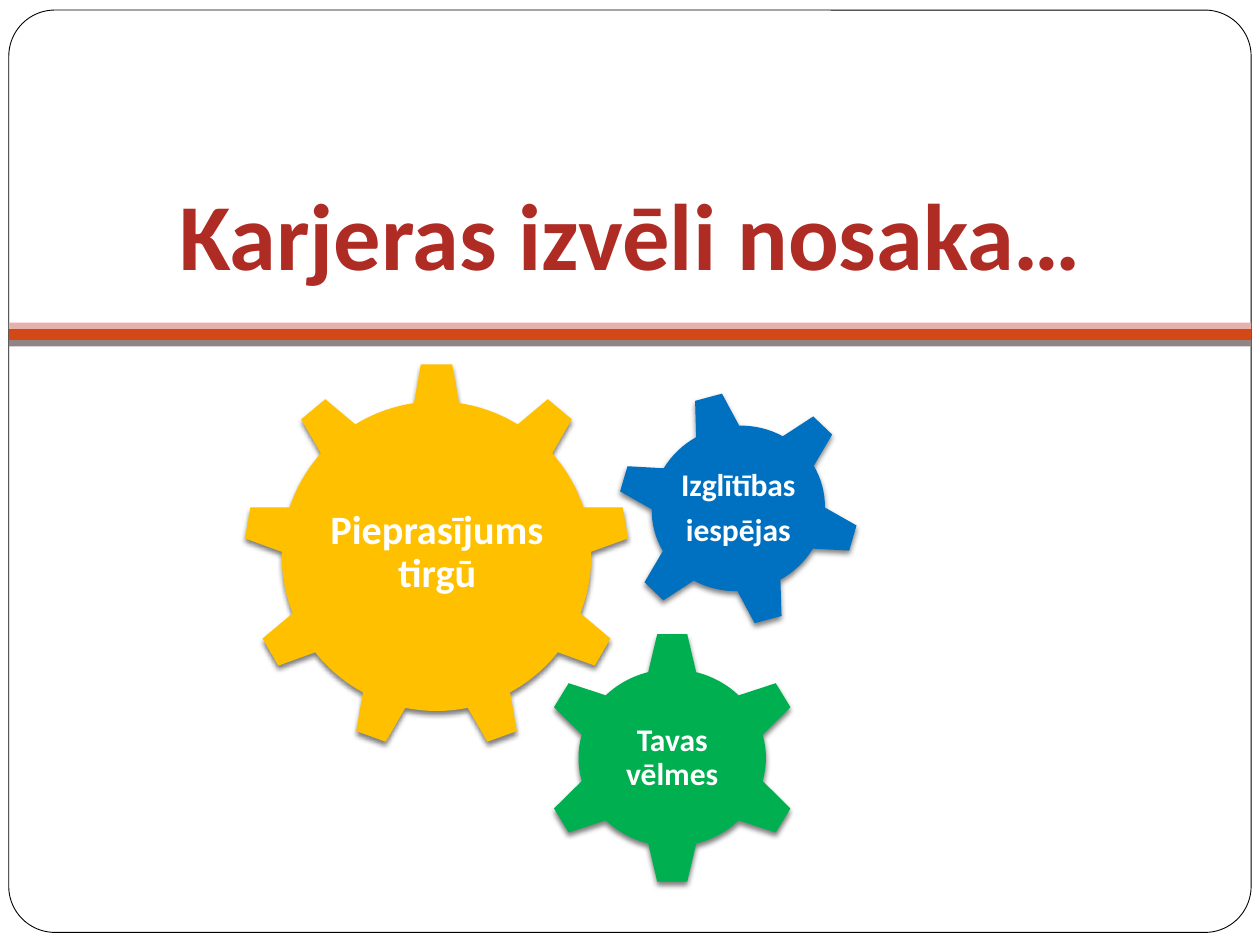
import pptx
import pptx.util
import pptx.dml.color
import pptx.enum.shapes
import pptx.enum.text
import pptx.oxml
import pptx.oxml.ns

Inches, Pt = pptx.util.Inches, pptx.util.Pt
Kind = pptx.enum.shapes.MSO_SHAPE
Align = pptx.enum.text.PP_ALIGN
Anchor = pptx.enum.text.MSO_ANCHOR

theme = {
    "font": "Calibri", "title": "AF2C25", "paper": "FFFFFF", "edge": "000000",
    "rose": "E6B1AC", "rust": "D34817", "grey": "918485",
    "gold": "FFC000", "green": "00B050", "blue": "0070C0",
    "head": 54, "large": 23, "small": 18,
}

SHADOW = (
    f'<a:effectLst {pptx.oxml.ns.nsdecls("a")}>'
    f'<a:outerShdw blurRad="{Pt(3)}" dist="{Pt(2)}" dir="5400000" rotWithShape="0">'
    '<a:srgbClr val="000000"><a:alpha val="50000"/></a:srgbClr>'
    '</a:outerShdw></a:effectLst>'
)


def add_shape(kind, box, fill):
    shape = slide.shapes.add_shape(kind, *map(Inches, box))
    shape.shadow.inherit = False
    shape.fill.solid()
    shape.fill.fore_color.rgb = pptx.dml.color.RGBColor.from_string(theme[fill])
    shape.line.fill.background()
    return shape


def style(par, size, color):
    par.alignment = Align.CENTER
    par.font.name = theme["font"]
    par.font.size = Pt(theme[size])
    par.font.bold = True
    par.font.color.rgb = pptx.dml.color.RGBColor.from_string(theme[color])


deck = pptx.Presentation()
deck.slide_width, deck.slide_height = Inches(10), Inches(7.5)
slide = deck.slides.add_slide(deck.slide_layouts[5])

# Rounded frame
frame = add_shape(Kind.ROUNDED_RECTANGLE, (0.07, 0.08, 9.86, 7.32), "paper")
frame.adjustments[0] = 0.05
frame.line.color.rgb = pptx.dml.color.RGBColor.from_string(theme["edge"])
frame.line.width = Pt(0.5)

# Striped band under the title
for top, height, fill in [(2.6, 0.1, "rust"), (2.56, 0.05, "rose"), (2.7, 0.05, "grey")]:
    add_shape(Kind.RECTANGLE, (0.07, top, 9.86, height), fill)

# Gears: kind, place, turn, fill, label place, lines, size
gears = [
    (Kind.GEAR_9, (1.93, 2.88, 3.07, 3.07), 0, "gold",
     (2.55, 3.6, 1.84, 1.58), ["Pieprasījums tirgū"], "large"),
    (Kind.GEAR_6, (4.29, 5.01, 2.09, 2.01), 0, "green",
     (4.81, 5.52, 1.05, 0.99), ["Tavas vēlmes"], "small"),
    (Kind.GEAR_6, (4.89, 3.1, 1.94, 1.87), 345, "blue",
     (5.32, 3.51, 1.08, 1.06), ["Izglītības", "iespējas"], "small"),
]
for kind, box, turn, fill, place, lines, size in gears:
    gear = add_shape(kind, box, fill)
    gear.rotation = turn
    props = gear.element.spPr
    props.replace(props.find(pptx.oxml.ns.qn("a:effectLst")), pptx.oxml.parse_xml(SHADOW))

    frame = slide.shapes.add_textbox(*map(Inches, place)).text_frame
    frame.word_wrap = True
    frame.vertical_anchor = Anchor.MIDDLE
    frame.margin_left = frame.margin_right = Inches(0.03)
    frame.margin_top = frame.margin_bottom = Inches(0.03)
    frame.text = "\n".join(lines)
    for par in frame.paragraphs:
        style(par, size, "paper")
        par.line_spacing = 0.9
        par.space_after = Pt(round(theme[size] * 0.35, 1))

# Title, brought in front of the frame
title = slide.shapes.title
title.element.getparent().append(title.element)
title.left, title.top, title.width, title.height = map(Inches, (0.16, 1.22, 9.69, 1.18))
title.text_frame.text = "Karjeras izvēli nosaka…"
title.text_frame.vertical_anchor = Anchor.BOTTOM
title.text_frame.margin_bottom = Inches(0.1)
style(title.text_frame.paragraphs[0], "head", "title")

deck.save("out.pptx")
